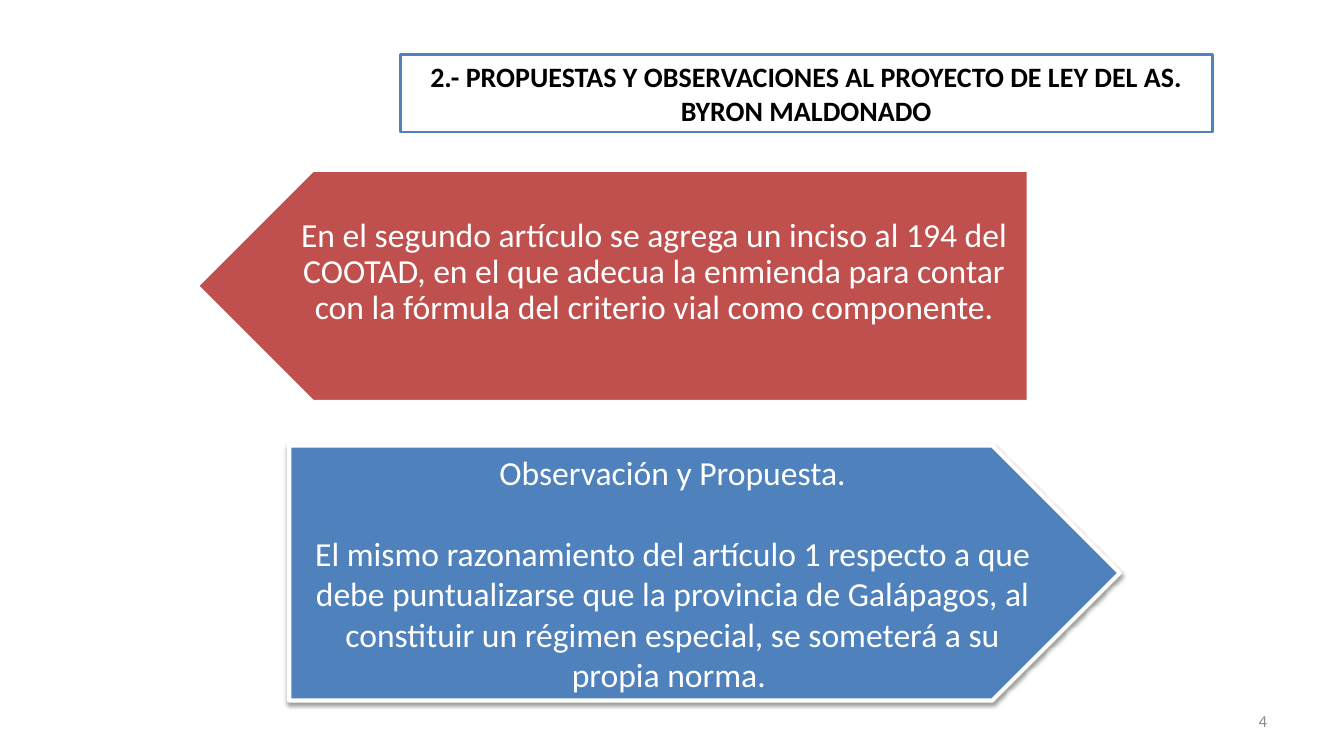
"""Builds the slide with the bill's proposal and the observation on it."""
from dataclasses import dataclass

from lxml.etree import SubElement
from pptx import Presentation
from pptx.dml.color import RGBColor as RGB
from pptx.enum.shapes import MSO_SHAPE as SHAPE
from pptx.enum.text import MSO_ANCHOR as ANCHOR, MSO_AUTO_SIZE as AUTO, PP_ALIGN as ALIGN
from pptx.oxml.ns import qn
from pptx.util import Pt


@dataclass(frozen=True)
class Theme:
    font: str = "Calibri"
    white: RGB = RGB(0xFF, 0xFF, 0xFF)
    black: RGB = RGB(0, 0, 0)
    gray: RGB = RGB(0x8C, 0x8C, 0x8C)
    red: RGB = RGB(0xC0, 0x50, 0x4D)
    blue: RGB = RGB(0x4F, 0x81, 0xBD)
    title: float = 20
    body: float = 24
    number: float = 12


T = Theme()


def paint(sp, fill, line, width):
    sp.fill.solid()
    sp.fill.fore_color.rgb = fill
    sp.line.color.rgb = line
    sp.line.width = Pt(width)


def write(sp, texts, size, color, bold=False, align=ALIGN.CENTER, anchor=ANCHOR.MIDDLE):
    tf = sp.text_frame
    tf.word_wrap = True
    tf.auto_size = AUTO.NONE
    tf.vertical_anchor = anchor
    for i, text in enumerate(texts):
        p = tf.add_paragraph() if i else tf.paragraphs[0]
        p.alignment = align
        r = p.add_run()
        r.text = text
        r.font.name, r.font.size, r.font.bold = T.font, Pt(size), bold
        r.font.color.rgb = color
    return tf


prs = Presentation()
prs.slide_width, prs.slide_height = Pt(960), Pt(540)
s = prs.slides.add_slide(prs.slide_layouts[5])

title = s.shapes.title
title.left, title.top, title.width, title.height = Pt(285.8), Pt(38.9), Pt(580.3), Pt(55.4)
paint(title, T.white, T.blue, 2)
write(title, ["2.- PROPUESTAS Y OBSERVACIONES AL PROYECTO DE LEY DEL AS. BYRON MALDONADO"],
      T.title, T.black, bold=True, anchor=ANCHOR.TOP)

proposal = s.shapes.add_shape(SHAPE.PENTAGON, Pt(141.1), Pt(121.7), Pt(593.3), Pt(164.9))
proposal.rotation = 180
proposal.shadow.inherit = False
paint(proposal, T.red, T.white, 2)

label = s.shapes.add_textbox(Pt(166.3), Pt(112.3), Pt(564.5), Pt(164.9))
tf = write(label, ["En el segundo artículo se agrega un inciso al 194 del COOTAD, en el que adecua la "
                   "enmienda para contar con la fórmula del criterio vial como componente."],
           T.body, T.white)
tf.margin_left, tf.margin_right = Pt(46), Pt(8.6)
tf.margin_top = tf.margin_bottom = Pt(5)
tf.paragraphs[0].line_spacing = 0.9

observation = s.shapes.add_shape(SHAPE.PENTAGON, Pt(206.6), Pt(318.2), Pt(593.3), Pt(182.2))
observation.shadow.inherit = False
paint(observation, T.blue, T.white, 3)
effects = observation.element.spPr.find(qn("a:effectLst"))
shadow = SubElement(effects, qn("a:outerShdw"), blurRad=str(Pt(3.1)), dist=str(Pt(1.6)),
                    dir="5400000", rotWithShape="0")
tint = SubElement(shadow, qn("a:srgbClr"), val=str(T.black))
SubElement(tint, qn("a:alpha"), val="38000")
tf = write(observation, ["Observación y Propuesta.",
                         "El mismo razonamiento del artículo 1 respecto a que debe puntualizarse que la "
                         "provincia de Galápagos, al constituir un régimen especial, se someterá a su "
                         "propia norma. "], T.body, T.white)
tf.paragraphs[1].space_before = Pt(29)

number = s.shapes.add_textbox(Pt(688.3), Pt(500.4), Pt(223.9), Pt(28.8))
write(number, ["4"], T.number, T.gray, align=ALIGN.RIGHT)

prs.save("out.pptx")
